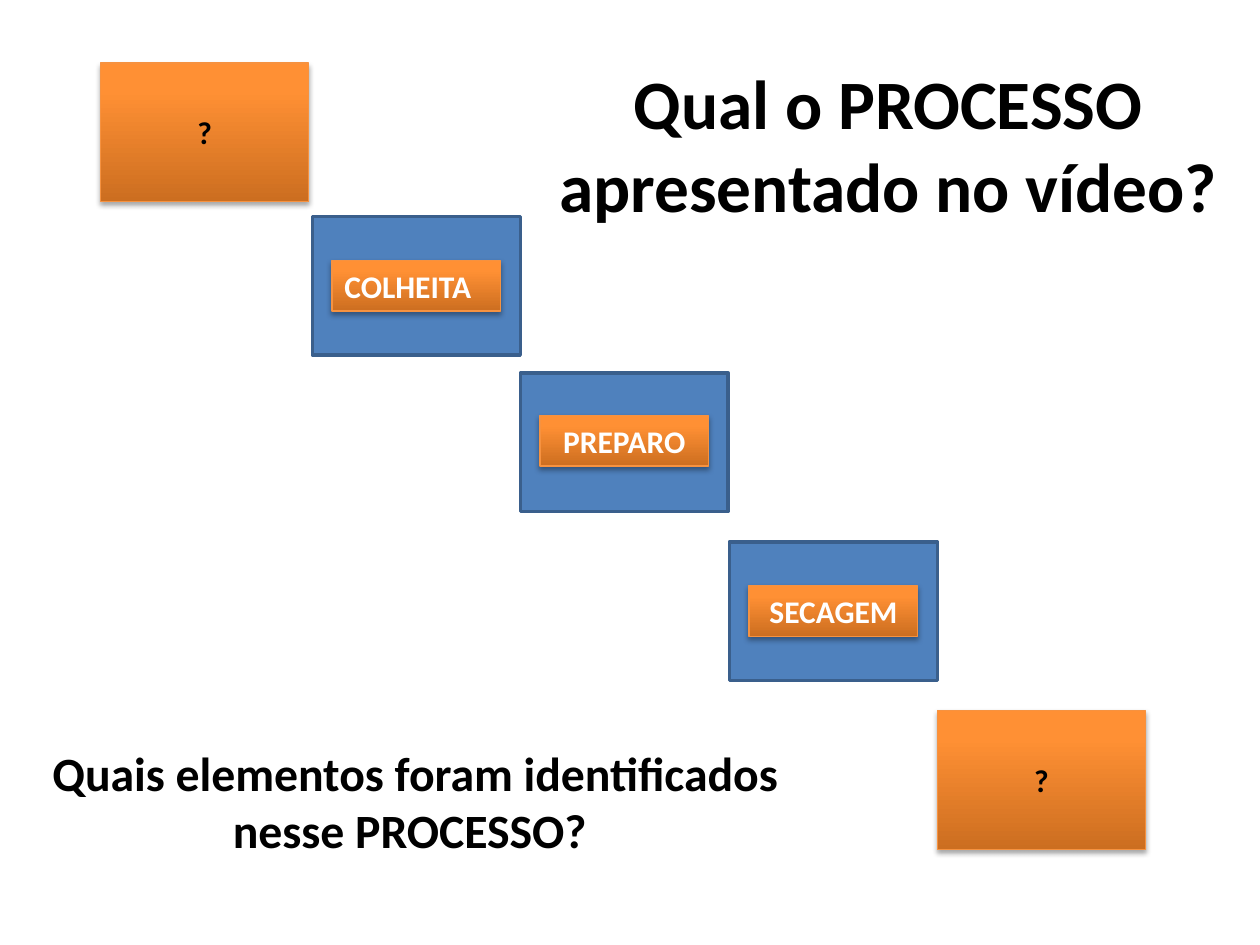
"""Build a slide with a staircase of process steps and two questions."""
from lxml import etree
from pptx import Presentation
from pptx import util as u
from pptx.dml.color import RGBColor
from pptx.enum import shapes, text
from pptx.oxml import parse_xml
from pptx.oxml.ns import qn

COLORS = {"black": "000000", "white": "FFFFFF", "blue": "4F81BD",
          "blue_line": "3A5F8C", "orange_line": "F69240"}
GRADIENT = [(0, "CC6E20"), (80, "FF9034"), (100, "FF9136")]
TITLE = "Qual o PROCESSO\vapresentado no vídeo? "
QUESTION = "Quais elementos foram identificados nesse PROCESSO? "
STEPS = [
    {"label": "?", "left": 0.8, "top": 0.5, "label_top": 0.85},
    {"label": "COLHEITA", "left": 2.48, "top": 1.72, "label_top": 2.07},
    {"label": "PREPARO", "left": 4.13, "top": 2.96, "label_top": 3.3},
    {"label": "SECAGEM", "left": 5.79, "top": 4.3, "label_top": 4.65},
    {"label": "?", "left": 7.44, "top": 5.64, "label_top": 5.99},
]
STEP_WIDTH, STEP_HEIGHT = 1.65, 1.1
LABEL_WIDTH, LABEL_HEIGHT = 1.34, 0.4


def write_text(shape, content, size, color="black", align="CENTER", anchor="MIDDLE"):
    frame = shape.text_frame
    frame.text = content
    frame.word_wrap = True
    frame.auto_size = text.MSO_AUTO_SIZE.NONE
    frame.vertical_anchor = text.MSO_ANCHOR[anchor]
    paragraph = frame.paragraphs[0]
    paragraph.alignment = text.PP_ALIGN[align]
    for run in paragraph.runs:
        run.font.name = "Calibri"
        run.font.size = u.Pt(size)
        run.font.bold = True
        run.font.color.rgb = RGBColor.from_string(COLORS[color])


def place(left, top, width, height):
    return [u.Inches(value) for value in (left, top, width, height)]


def add_rectangle(slide, box, fill, line, line_width):
    shape = slide.shapes.add_shape(shapes.MSO_SHAPE.RECTANGLE, *place(*box))
    shape.shadow.inherit = False
    shape.fill.solid()
    shape.fill.fore_color.rgb = RGBColor.from_string(COLORS[fill])
    shape.line.color.rgb = RGBColor.from_string(COLORS[line])
    shape.line.width = u.Pt(line_width)
    return shape


def add_orange_rectangle(slide, box):
    shape = add_rectangle(slide, box, "orange_line", "orange_line", 0.75)
    properties = shape.element.spPr
    namespace = 'xmlns:a="http://schemas.openxmlformats.org/drawingml/2006/main"'
    stops = "".join(f'<a:gs pos="{position * 1000}"><a:srgbClr val="{color}"/></a:gs>'
                    for position, color in GRADIENT)
    gradient = parse_xml(f'<a:gradFill {namespace} rotWithShape="1"><a:gsLst>{stops}</a:gsLst>'
                         '<a:lin ang="16200000" scaled="0"/></a:gradFill>')
    properties.replace(properties.find(qn("a:solidFill")), gradient)
    shadow = etree.SubElement(properties.find(qn("a:effectLst")), qn("a:outerShdw"),
                              blurRad=str(u.Pt(3.1)), dist=str(u.Pt(1.8)),
                              dir="5400000", rotWithShape="0")
    color = etree.SubElement(shadow, qn("a:srgbClr"), val=COLORS["black"])
    etree.SubElement(color, qn("a:alpha"), val="35000")
    return shape


def add_step(slide, label, left, top, label_top):
    box = (left, top, STEP_WIDTH, STEP_HEIGHT)
    label_left = left + (STEP_WIDTH - LABEL_WIDTH) / 2
    label_box = (label_left, label_top, LABEL_WIDTH, LABEL_HEIGHT)
    if label == "?":
        add_orange_rectangle(slide, box)
        label_shape = slide.shapes.add_textbox(*place(*label_box))
        write_text(label_shape, label, 18, anchor="TOP")
    else:
        add_rectangle(slide, box, "blue", "blue_line", 2)
        label_shape = add_orange_rectangle(slide, label_box)
        align = "LEFT" if label == "COLHEITA" else "CENTER"
        write_text(label_shape, label, 18, color="white", align=align, anchor="TOP")


def main():
    presentation = Presentation()
    presentation.slide_width, presentation.slide_height = u.Inches(10), u.Inches(7.5)
    slide = presentation.slides.add_slide(presentation.slide_layouts[5])
    title = slide.shapes.title
    title.left, title.top, title.width, title.height = place(4.29, 0.51, 5.52, 1.25)
    write_text(title, TITLE, 39.6)
    for step in STEPS:
        add_step(slide, **step)
    question = slide.shapes.add_textbox(*place(0.26, 5.57, 6.07, 1.57))
    write_text(question, QUESTION, 27.3)
    presentation.save("out.pptx")


if __name__ == "__main__":
    main()
